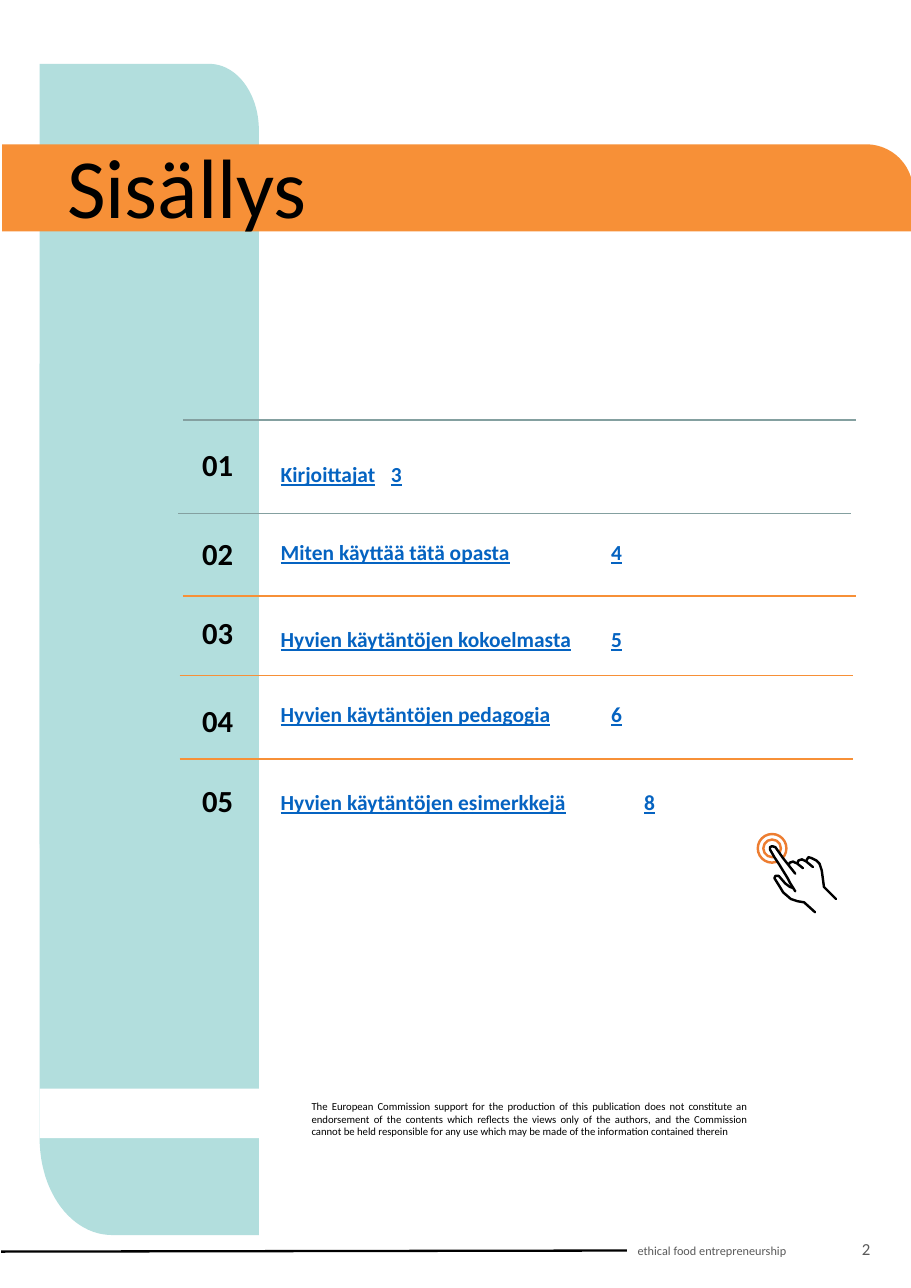
from lxml import etree
from pptx import Presentation
from pptx import util as u
from pptx.dml.color import RGBColor
from pptx.enum import shapes, text
from pptx.oxml.ns import qn

TEAL = RGBColor(0xB2, 0xDE, 0xDD)
ORANGE = RGBColor(0xF7, 0x90, 0x37)
RING_ORANGE = RGBColor(0xED, 0x7D, 0x31)
RULE_GREY = RGBColor(0x84, 0xA0, 0xA0)
LINK_BLUE = RGBColor(0x05, 0x63, 0xC1)
FOOTER_GREY = RGBColor(0x59, 0x59, 0x59)
BLACK = RGBColor(0, 0, 0)
WHITE = RGBColor(255, 255, 255)

# number, number box top, title, title box top, page, tab stop, tab size
CONTENTS = [
    ("01", 4.04, "Kirjoittajat", 4.01, "3", 1.0, 32),
    ("02", 4.85, "Miten käyttää tätä opasta", 4.82, "4", 3.0, 14),
    ("03", 5.57, "Hyvien käytäntöjen kokoelmasta", 5.61, "5", 3.0, 8),
    ("04", 6.37, "Hyvien käytäntöjen pedagogia", 6.29, "6", 3.0, 14),
    ("05", 7.09, "Hyvien käytäntöjen esimerkkejä", 7.09, "8", 3.3, 14),
]
RULES = [
    (1.66, 3.81, RULE_GREY), (1.62, 4.66, RULE_GREY), (1.66, 5.41, ORANGE),
    (1.63, 6.13, ORANGE), (1.63, 6.89, ORANGE),
]
RULE_LENGTH = 6.11
HAND_STROKES = [
    # thumb and wrist
    [(7.2, 8.06), (7.17, 8.05), (7.13, 8.02), (7.07, 7.95), (7.04, 7.95), (7.03, 7.97),
     (7.08, 8.05), (7.11, 8.1), (7.18, 8.16), (7.24, 8.18), (7.3, 8.19), (7.4, 8.28)],
    # folded fingers
    [(7.32, 7.81), (7.34, 7.78), (7.37, 7.79), (7.41, 7.81), (7.44, 7.84)],
    [(7.24, 7.83), (7.25, 7.81), (7.28, 7.8), (7.32, 7.82), (7.38, 7.87)],
    [(7.16, 7.85), (7.17, 7.83), (7.2, 7.82), (7.24, 7.84), (7.29, 7.88)],
    # back of the hand
    [(7.44, 7.84), (7.46, 7.9), (7.48, 8.05), (7.59, 8.16)],
    # pointing finger
    [(7.22, 8.09), (7.17, 8.01), (7.15, 7.97), (7.07, 7.84), (7.03, 7.78), (6.99, 7.71),
     (6.99, 7.69), (7.01, 7.68), (7.04, 7.69), (7.11, 7.79), (7.22, 7.93)],
]


def bezier(start, control_1, control_2, end, steps=24):
    """Return points along a cubic curve, both ends included."""
    points = []
    for step in range(steps + 1):
        t = step / steps
        weights = ((1 - t) ** 3, 3 * t * (1 - t) ** 2, 3 * t * t * (1 - t), t ** 3)
        corners = (start, control_1, control_2, end)
        points.append(tuple(sum(w * c[axis] for w, c in zip(weights, corners))
                            for axis in (0, 1)))
    return points


class Page:
    def __init__(self, slide, font_name):
        self.slide = slide
        self.font_name = font_name

    def paint(self, shape, fill=None, line=None, width=1.6):
        shape.shadow.inherit = False
        if fill is None:
            shape.fill.background()
        else:
            shape.fill.solid()
            shape.fill.fore_color.rgb = fill
        if line is None:
            shape.line.fill.background()
        else:
            shape.line.color.rgb = line
            shape.line.width = u.Pt(width)
        return shape

    def rectangle(self, left, top, width, height, fill):
        shape = self.slide.shapes.add_shape(
            shapes.MSO_SHAPE.RECTANGLE,
            u.Inches(left), u.Inches(top), u.Inches(width), u.Inches(height))
        return self.paint(shape, fill)

    def outline(self, points, closed=True, **colours):
        points = [(u.Inches(x), u.Inches(y)) for x, y in points]
        builder = self.slide.shapes.build_freeform(*points[0], scale=1.0)
        builder.add_line_segments(points[1:], close=closed)
        return self.paint(builder.convert_to_shape(), **colours)

    def stroke(self, points):
        shape = self.outline(points, closed=False, line=BLACK)
        line = shape.line._get_or_add_ln()
        line.set("cap", "rnd")
        etree.SubElement(line, qn("a:round"))

    def ring(self, center_x, center_y, radius, start, end):
        """Draw an open ring clockwise between two angles in degrees."""
        shape = self.slide.shapes.add_shape(
            shapes.MSO_SHAPE.ARC, u.Inches(center_x - radius), u.Inches(center_y - radius),
            u.Inches(2 * radius), u.Inches(2 * radius))
        shape.adjustments[0] = start * 0.6
        shape.adjustments[1] = end * 0.6
        self.paint(shape, line=RING_ORANGE)

    def line(self, start, end, colour, width):
        connector = self.slide.shapes.add_connector(
            shapes.MSO_CONNECTOR.STRAIGHT, *(u.Inches(value) for value in start + end))
        connector.line.color.rgb = colour
        connector.line.width = u.Pt(width)
        etree.SubElement(connector._element.spPr, qn("a:effectLst"))

    def label(self, content, left, top, width, height, tab=None, align="LEFT",
              anchor="MIDDLE", spacing=None, **font):
        """Add a text box; content is a string or a list of (string, font changes)."""
        box = self.slide.shapes.add_textbox(
            u.Inches(left), u.Inches(top), u.Inches(width), u.Inches(height))
        frame = box.text_frame
        frame.word_wrap = True
        frame.vertical_anchor = getattr(text.MSO_ANCHOR, anchor)
        paragraph = frame.paragraphs[0]
        paragraph.alignment = getattr(text.PP_ALIGN, align)
        if spacing:
            paragraph.line_spacing = spacing
        if tab:
            tabs = etree.SubElement(paragraph._p.get_or_add_pPr(), qn("a:tabLst"))
            etree.SubElement(tabs, qn("a:tab"), pos=str(u.Inches(tab)), algn="l")
        for words, changes in [(content, {})] if isinstance(content, str) else content:
            self.add_run(paragraph, words, **{**font, **changes})

    def add_run(self, paragraph, words, size, colour=BLACK, bold=False, underline=False):
        run = paragraph.add_run()
        run.text = words
        run.font.name = self.font_name
        run.font.size = u.Pt(size)
        run.font.color.rgb = colour
        run.font.bold = bold
        run.font.underline = underline


def draw_background(page):
    page.label("ethical food entrepreneurship", 5.69, 11.15, 1.87, 0.4,
               size=8, colour=FOOTER_GREY)
    page.line((0.01, 11.36), (5.69, 11.35), BLACK, 1.5)
    for top in (0.58, 3.3):
        bottom = top + 7.91
        lower_left = bezier((1.02, bottom), (0.65, bottom),
                            (0.36, bottom - 0.39), (0.36, bottom - 0.88))
        upper_right = bezier((1.9, top), (2.15, top), (2.35, top + 0.27), (2.35, top + 0.6))
        page.outline([(2.35, bottom)] + lower_left + [(0.36, top)] + upper_right, fill=TEAL)
    page.rectangle(0.36, 9.88, 2.86, 0.45, WHITE)
    banner_corner = bezier((7.86, 1.31), (8.1, 1.31), (8.29, 1.5), (8.29, 1.74))
    page.outline([(0.02, 2.1), (0.02, 1.31)] + banner_corner + [(8.29, 2.1)], fill=ORANGE)
    for left, top, colour in RULES:
        page.line((left, top), (left + RULE_LENGTH, top), colour, 1)
    page.label("The European Commission support for the production of this publication does "
               "not constitute an endorsement of the contents which reflects the views only "
               "of the authors, and the Commission cannot be held responsible for any use "
               "which may be made of the information contained therein",
               2.73, 9.93, 4.15, 0.45, align="JUSTIFY", anchor="TOP", size=7)


def draw_contents(page):
    page.label("Sisällys", 0.51, 1.27, 7.45, 1.17, anchor="TOP", spacing=0.9, size=55)
    for number, number_top, title, title_top, target, tab, tab_size in CONTENTS:
        page.label(number, 1.62, number_top, 0.71, 0.38, align="CENTER", spacing=0.9,
                   size=20, bold=True)
        gap = ("\t", {"size": tab_size, "underline": False})
        page.label([(title, {}), gap, (target, {})], 2.45, title_top, 5.3, 0.38, tab=tab,
                   size=14, colour=LINK_BLUE, bold=True, underline=True)
    page.label("2", 7.54, 11.08, 0.46, 0.51, align="RIGHT", size=11, colour=FOOTER_GREY)


def draw_pointing_hand(page):
    page.ring(7.01, 7.7, 0.13, 70, 45)
    page.ring(7.01, 7.7, 0.08, 75, 35)
    for points in HAND_STROKES:
        page.stroke(points)


def main():
    presentation = Presentation()
    presentation.slide_width = u.Inches(8.27)
    presentation.slide_height = u.Inches(11.69)
    page = Page(presentation.slides.add_slide(presentation.slide_layouts[6]), "Calibri")
    draw_background(page)
    draw_contents(page)
    draw_pointing_hand(page)
    presentation.save("out.pptx")


if __name__ == "__main__":
    main()
